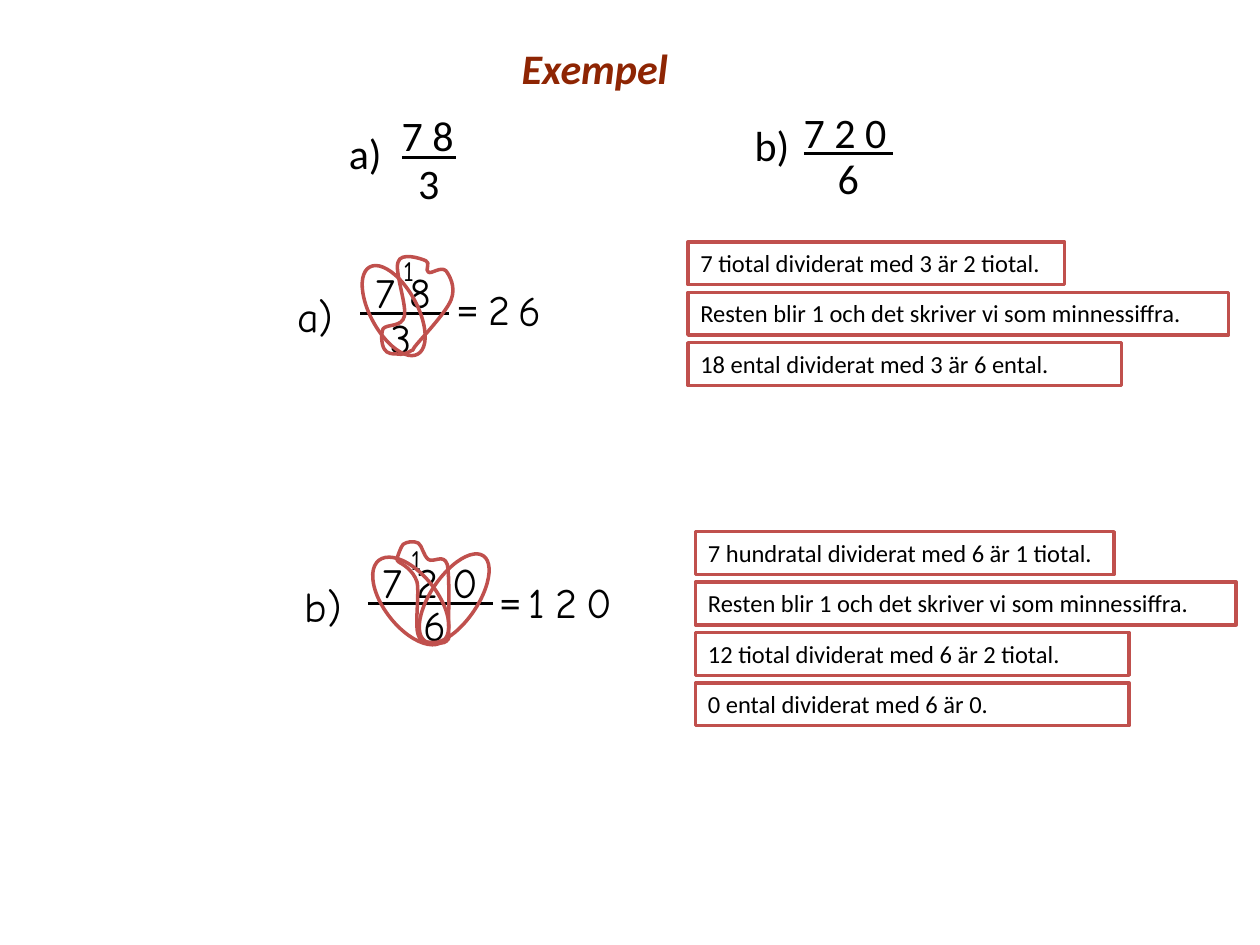
from lxml.etree import SubElement
from pptx import Presentation
from pptx.dml.color import RGBColor
from pptx.enum.shapes import MSO_CONNECTOR, MSO_SHAPE
from pptx.enum.text import MSO_ANCHOR, PP_ALIGN
from pptx.oxml.ns import qn
from pptx.util import Inches, Pt

COLORS = {"title": "8E2503", "text": "000000", "mark": "C0504D", "box": "FFFFFF"}
PLAIN, HAND = "Calibri", "Comic Neue"

# text, left, top, width
TASKS = [
    {"texts": [("a)", 2.67, 0.96, 0.54), ("7 8", 3.09, 0.82, 1.14), ("3", 3.22, 1.2, 0.31)],
     "bar": (3.19, 3.62, 1.25)},
    {"texts": [("b)", 5.89, 0.9, 0.54), ("7 2 0", 6.28, 0.8, 1.14), ("6", 6.55, 1.16, 0.31)],
     "bar": (6.38, 7.09, 1.22)},
]
SOLUTIONS = [
    {"texts": [("a)", 2.26, 2.26, 0.54), ("7 8", 2.88, 2.07, 1.14), ("3", 3, 2.43, 0.63)],
     "answer": [("2", 3.78, 2.2, 0.46), ("6", 4.02, 2.21, 0.46)], "units": [],
     "equals": (3.53, 2.2), "carry": (3.1, 1.96), "bar": (2.86, 3.56, 2.49),
     "ellipses": [(2.94, 2.07, 0.37, 0.79, 331.2)],
     "loop": [(3.15, 2.81),
              (3.12, 2.81), (3.07, 2.81), (3.05, 2.77), (3.03, 2.74), (3.02, 2.66), (3.04, 2.61),
              (3.07, 2.57), (3.19, 2.6), (3.21, 2.51), (3.23, 2.42), (3.13, 2.15), (3.16, 2.08),
              (3.18, 2), (3.34, 2.05), (3.38, 2.07), (3.42, 2.08), (3.37, 2.15), (3.4, 2.16),
              (3.42, 2.18), (3.5, 2.11), (3.54, 2.15), (3.57, 2.19), (3.62, 2.28), (3.58, 2.38),
              (3.54, 2.48), (3.36, 2.67), (3.31, 2.73), (3.25, 2.8), (3.3, 2.77), (3.27, 2.78),
              (3.24, 2.8), (3.19, 2.82), (3.15, 2.81)],
     "steps_at": (5.46, 1.92),
     "steps": [("7 tiotal dividerat med 3 är 2 tiotal.", 2.99),
               ("Resten blir 1 och det skriver vi som minnessiffra.", 4.29),
               ("18 ental dividerat med 3 är 6 ental.", 3.44)]},
    {"texts": [("b)", 2.32, 4.56, 0.54), ("7 2 0", 2.94, 4.37, 1.14), ("6", 3.26, 4.71, 0.63)],
     "answer": [("1", 4.1, 4.53, 0.46), ("2", 4.31, 4.53, 0.46)],
     "units": [("0", 4.56, 4.53, 0.46)],
     "equals": (3.87, 4.53), "carry": (3.16, 4.26), "bar": (2.92, 3.91, 4.79),
     "ellipses": [(3.05, 4.36, 0.42, 0.82, 321.9), (3.42, 4.34, 0.37, 0.82, 34.4)],
     "loop": [(3.56, 4.97),
              (3.56, 5.06), (3.57, 5.05), (3.56, 5.07), (3.54, 5.1), (3.51, 5.11), (3.47, 5.1),
              (3.43, 5.09), (3.34, 5.12), (3.32, 5.04), (3.29, 4.96), (3.33, 4.71), (3.31, 4.62),
              (3.28, 4.52), (3.18, 4.47), (3.18, 4.47), (3.17, 4.46), (3.15, 4.46), (3.15, 4.43),
              (3.16, 4.41), (3.18, 4.34), (3.2, 4.32), (3.23, 4.3), (3.28, 4.29), (3.32, 4.31),
              (3.35, 4.33), (3.36, 4.41), (3.4, 4.44), (3.44, 4.47), (3.52, 4.39), (3.55, 4.48),
              (3.57, 4.57), (3.56, 4.87), (3.56, 4.97)],
     "steps_at": (5.52, 4.22),
     "steps": [("7 hundratal dividerat med 6 är 1 tiotal.", 3.32),
               ("Resten blir 1 och det skriver vi som minnessiffra.", 4.29),
               ("12 tiotal dividerat med 6 är 2 tiotal.", 3.44),
               ("0 ental dividerat med 6 är 0.", 3.44)]},
]
STEP_HEIGHT, STEP_PITCH = 0.34, 0.4


def color(name):
    return RGBColor.from_string(COLORS[name])


def write(box, text, font_name, size, ink="text"):
    frame = box.text_frame
    frame.word_wrap = True
    frame.vertical_anchor = MSO_ANCHOR.TOP
    frame.text = text
    para = frame.paragraphs[0]
    para.alignment = PP_ALIGN.LEFT
    para.font.name = font_name
    para.font.size = Pt(size)
    para.font.color.rgb = color(ink)
    return para


def add_text(shapes, text, left, top, width, font_name, size=24, height=0.5):
    box = shapes.add_textbox(Inches(left), Inches(top), Inches(width), Inches(height))
    write(box, text, font_name, size)


def add_bar(shapes, left, right, y):
    bar = shapes.add_connector(MSO_CONNECTOR.STRAIGHT, Inches(left), Inches(y), Inches(right), Inches(y))
    bar.line.color.rgb = color("text")
    bar.line.width = Pt(1.5)
    SubElement(bar._element.spPr, qn("a:effectLst"))


def outline(shape, filled=False):
    shape.shadow.inherit = False
    shape.line.color.rgb = color("mark")
    shape.line.width = Pt(2)
    if filled:
        shape.fill.solid()
        shape.fill.fore_color.rgb = color("box")
    else:
        shape.fill.background()


def add_ellipse(shapes, left, top, width, height, rotation):
    ellipse = shapes.add_shape(MSO_SHAPE.OVAL, Inches(left), Inches(top), Inches(width), Inches(height))
    ellipse.rotation = rotation
    outline(ellipse)


def add_loop(shapes, points):
    spots = [(Inches(x), Inches(y)) for x, y in points]
    builder = shapes.build_freeform(*spots[0])
    builder.add_line_segments(spots[3::3], close=True)
    loop = builder.convert_to_shape()
    outline(loop)
    for index, segment in enumerate(list(loop._element.spPr.iter(qn("a:lnTo")))):
        segment.tag = qn("a:cubicBezTo")
        for corner in list(segment):
            segment.remove(corner)
        for x, y in spots[3 * index + 1:3 * index + 4]:
            SubElement(segment, qn("a:pt"), x=str(x - loop.left), y=str(y - loop.top))


def add_steps(shapes, left, top, steps):
    for row, (text, width) in enumerate(steps):
        box = shapes.add_shape(MSO_SHAPE.RECTANGLE, Inches(left), Inches(top + row * STEP_PITCH),
                               Inches(width), Inches(STEP_HEIGHT))
        outline(box, filled=True)
        write(box, text, PLAIN, 14)


def main():
    """Build the slide with two worked short divisions."""
    deck = Presentation()
    deck.slide_width, deck.slide_height = Inches(10), Inches(7.5)
    page = deck.slides.add_slide(deck.slide_layouts[5])
    shapes = page.shapes

    title = shapes.title
    title.left, title.top, title.width, title.height = map(Inches, (4.04, 0.29, 1.37, 0.5))
    heading = write(title, "Exempel", PLAIN, 24, "title")
    heading.font.bold = heading.font.italic = True
    title.text_frame.word_wrap = False

    for task in TASKS:
        group = shapes.add_group_shape()
        for text in task["texts"]:
            add_text(group.shapes, *text, PLAIN)
        add_bar(group.shapes, *task["bar"])

    for solution in SOLUTIONS:
        for text in solution["texts"] + solution["answer"]:
            add_text(shapes, *text, HAND)
        add_text(shapes, "=", *solution["equals"], 0.46, PLAIN)
        add_text(shapes, "1", *solution["carry"], 0.31, HAND, size=16, height=0.37)
        add_bar(shapes, *solution["bar"])
        add_steps(shapes, *solution["steps_at"], solution["steps"])
        for ellipse in solution["ellipses"]:
            add_ellipse(shapes, *ellipse)
        add_loop(shapes, solution["loop"])
        for text in solution["units"]:
            add_text(shapes, *text, HAND)

    deck.save("out.pptx")


if __name__ == "__main__":
    main()
